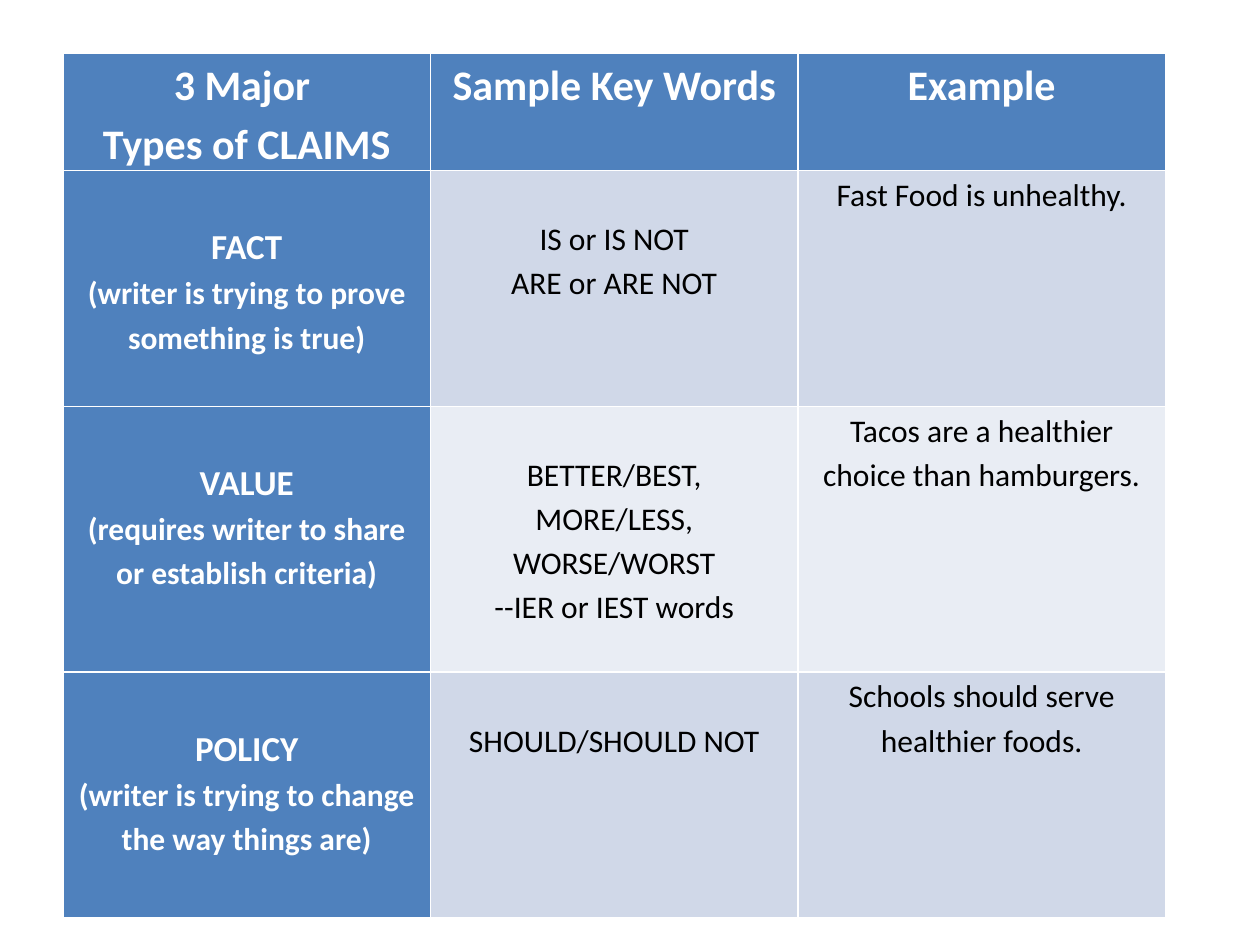
from pptx import Presentation
from pptx.dml.color import RGBColor
from pptx.enum import text
from pptx.util import Inches, Pt

BLUE = RGBColor(0x4F, 0x81, 0xBD)
BANDS = [RGBColor(0xE9, 0xED, 0xF4), RGBColor(0xD0, 0xD8, 0xE8)]
WHITE = RGBColor(0xFF, 0xFF, 0xFF)
BLACK = RGBColor(0, 0, 0)

ROWS = [
    ["3 Major \nTypes of CLAIMS", "Sample Key Words", "Example"],
    ["FACT\n(writer is trying to prove something is true)",
     "IS or IS NOT\nARE or ARE NOT",
     "Fast Food is unhealthy."],
    ["VALUE\n(requires writer to share or establish criteria)",
     "BETTER/BEST,\nMORE/LESS,\nWORSE/WORST\n--IER or IEST words",
     "Tacos are a healthier choice than hamburgers."],
    ["POLICY\n(writer is trying to change the way things are)",
     "SHOULD/SHOULD NOT",
     "Schools should serve healthier foods."],
]
HEIGHTS = [0.93, 1.87, 2.11, 1.95]
TOPS = [0.39, 0.35, 0]  # space above the text in each column of the body

deck = Presentation()
deck.slide_width, deck.slide_height = Inches(10), Inches(7.5)
slide = deck.slides.add_slide(deck.slide_layouts[6])

# The default table style draws the white rules between the cells.
table = slide.shapes.add_table(
    len(ROWS), 3, Inches(0.5), Inches(0.42),
    Inches(8.75), Inches(sum(HEIGHTS))).table
table.first_col = True
for col in table.columns:
    col.width = Inches(8.75 / 3)

for r, row in enumerate(ROWS):
    table.rows[r].height = Inches(HEIGHTS[r])
    for c, words in enumerate(row):
        head = r == 0 or c == 0
        cell = table.cell(r, c)
        cell.margin_left = cell.margin_right = Inches(0.07)
        cell.margin_top = Inches(TOPS[c] if r else 0)
        cell.margin_bottom = 0
        cell.fill.solid()
        cell.fill.fore_color.rgb = BLUE if head else BANDS[r % 2]
        cell.text_frame.text = words
        for n, para in enumerate(cell.text_frame.paragraphs):
            para.alignment = text.PP_ALIGN.CENTER
            para.line_spacing = 1.15
            font = para.runs[0].font
            font.name = "Calibri"
            font.bold = head
            font.color.rgb = WHITE if head else BLACK
            if r == 0:
                font.size = Pt(24)
            else:
                font.size = Pt(20 if c == 0 and n == 0 else 18)

deck.save("out.pptx")
